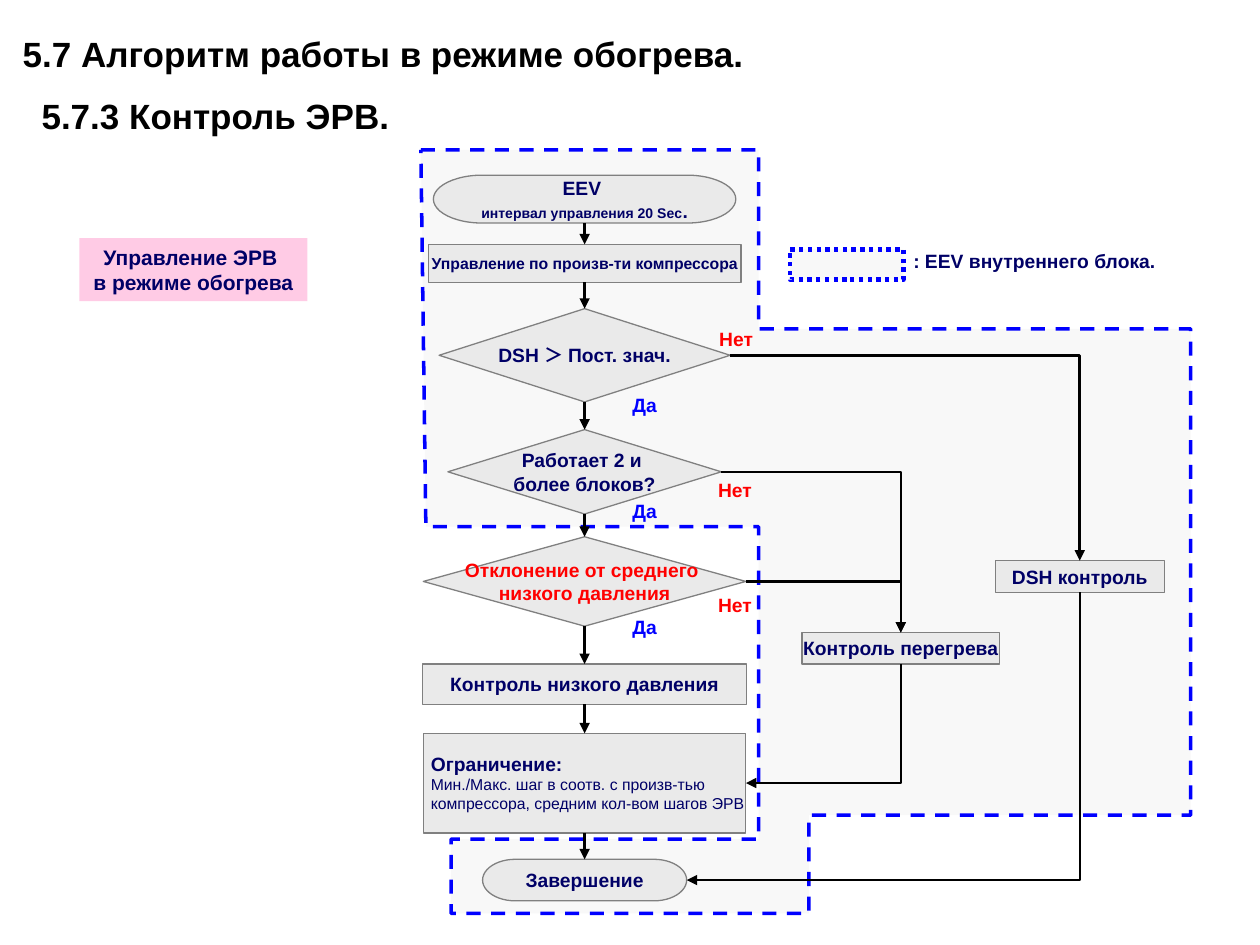
"""Build the heating-mode EEV control flowchart slide."""
from dataclasses import dataclass
from itertools import pairwise
from typing import NamedTuple

from lxml.etree import SubElement
from pptx import Presentation
from pptx.dml.color import RGBColor
from pptx.enum.dml import MSO_LINE
from pptx.enum.shapes import MSO_CONNECTOR as Link, MSO_SHAPE as Kind
from pptx.enum.text import MSO_ANCHOR as Anchor, MSO_AUTO_SIZE as AutoSize, PP_ALIGN as Align
from pptx.oxml.ns import qn
from pptx.util import Inches, Pt

COLORS = {
    "zone": "F8F8F8", "node": "EAEAEA", "edge": "808080", "navy": "000066",
    "red": "FF0000", "blue": "0000FF", "black": "000000", "pink": "FF99CC",
}
TOP, BOTTOM, RIGHT = 0, 2, 3
MAIN_X, OVERHEAT_X, DSH_X = 4.64, 7.15, 8.57
FRAME_FORMAT = {"word_wrap": False, "vertical_anchor": Anchor.MIDDLE}
LABEL_FORMAT = {"word_wrap": False, "auto_size": AutoSize.SHAPE_TO_FIT_TEXT}
LIMIT_FORMAT = {"margin_left": Inches(0.06), "margin_right": Inches(0.06),
                "margin_top": 0, "margin_bottom": Inches(0.01)}
TITLE_FORMAT = {"word_wrap": True, "vertical_anchor": Anchor.TOP, "auto_size": AutoSize.NONE}


class Words(NamedTuple):
    text: str
    size: float = 11
    color: str = "navy"
    bold: bool = True


@dataclass
class Node:
    kind: Kind
    center: float
    top: float
    width: float
    height: float
    lines: list[list[Words]]
    align: Align = Align.CENTER


@dataclass
class Label:
    left: float
    top: float
    width: float
    words: Words


NODES = {
    "start": Node(Kind.FLOWCHART_TERMINATOR, MAIN_X, 1.39, 2.4, 0.38, [
        [Words("EEV ")], [Words("интервал управления 20 Sec", 8), Words(".")]]),
    "capacity": Node(Kind.FLOWCHART_PROCESS, MAIN_X, 1.94, 2.48, 0.3, [
        [Words("Управление по произв-ти компрессора", 9)]]),
    "dsh_check": Node(Kind.FLOWCHART_DECISION, MAIN_X, 2.45, 2.31, 0.74, [
        [Words("DSH ＞ Пост. знач.")]]),
    "units_check": Node(Kind.FLOWCHART_DECISION, MAIN_X, 3.41, 2.17, 0.67, [
        [Words("Работает 2 и ")], [Words("более блоков?")]]),
    "deviation": Node(Kind.FLOWCHART_DECISION, MAIN_X, 4.26, 2.56, 0.71, [
        [Words("Отклонение от среднего ", color="red")],
        [Words("низкого давления", color="red")]]),
    "low_pressure": Node(Kind.FLOWCHART_PROCESS, MAIN_X, 5.27, 2.57, 0.32, [
        [Words("Контроль низкого давления")]]),
    "limit": Node(Kind.FLOWCHART_PROCESS, MAIN_X, 5.82, 2.56, 0.79, [
        [Words("Ограничение:")],
        [Words("Мин./Макс. шаг в соотв. с произв-тью", 9, bold=False)],
        [Words("компрессора, средним кол-вом шагов ЭРВ", 9, bold=False)]], Align.LEFT),
    "finish": Node(Kind.FLOWCHART_TERMINATOR, MAIN_X, 6.82, 1.62, 0.33, [
        [Words("Завершение")]]),
    "overheat": Node(Kind.FLOWCHART_PROCESS, OVERHEAT_X, 5.02, 1.57, 0.25, [
        [Words("Контроль перегрева")]]),
    "dsh": Node(Kind.FLOWCHART_PROCESS, DSH_X, 4.45, 1.34, 0.25, [
        [Words("DSH контроль")]]),
}
MAIN_FLOW = ["start", "capacity", "dsh_check", "units_check", "deviation",
             "low_pressure", "limit", "finish"]
BRANCHES = [("dsh_check", "dsh"), ("units_check", "overheat"), ("deviation", "overheat")]
RETURNS = [("dsh", "finish"), ("overheat", "limit")]
YES, NO = Words("Да", color="blue"), Words("Нет", color="red")
LABELS = [
    *(Label(4.92, top, 0.4, YES) for top in (3.07, 3.91, 4.83)),
    *(Label(left, top, 0.48, NO) for left, top in ((5.61, 2.55), (5.6, 3.75), (5.6, 4.66))),
    Label(7.15, 1.93, 2.14, Words(": EEV внутреннего блока.")),
]
ZONE = [(3.34, 1.19), (6.02, 1.19), (6.02, 2.61), (9.45, 2.61), (9.45, 6.47), (6.42, 6.47),
        (6.42, 7.25), (3.58, 7.25), (3.58, 6.66), (6.02, 6.66), (6.02, 4.18), (3.38, 4.18)]


def rgb(name: str) -> RGBColor:
    return RGBColor.from_string(COLORS[name])


def apply(target, values: dict) -> None:
    for name, value in values.items():
        setattr(target, name, value)


def write(frame, lines: list[list[Words]], align: Align) -> None:
    for index, line in enumerate(lines):
        paragraph = frame.paragraphs[0] if index == 0 else frame.add_paragraph()
        paragraph.alignment = align
        for words in line:
            run = paragraph.add_run()
            run.text = words.text
            apply(run.font, {"name": "Arial", "size": Pt(words.size), "bold": words.bold})
            run.font.color.rgb = rgb(words.color)


def paint(shape, fill: str, line: str, width: float, dash=None) -> None:
    shape.shadow.inherit = False
    shape.fill.solid()
    shape.fill.fore_color.rgb = rgb(fill)
    shape.line.color.rgb = rgb(line)
    apply(shape.line, {"width": Pt(width), "dash_style": dash})


def draw_node(shapes, node: Node):
    box = shapes.add_shape(node.kind, Inches(node.center - node.width / 2), Inches(node.top),
                           Inches(node.width), Inches(node.height))
    paint(box, "node", "edge", 0.75)
    apply(box.text_frame, FRAME_FORMAT)
    write(box.text_frame, node.lines, node.align)
    return box


def draw_arrow(shapes, source, source_side: int, target, target_side: int, kind=Link.STRAIGHT):
    arrow = shapes.add_connector(kind, 0, 0, 0, 0)
    arrow.begin_connect(source, source_side)
    arrow.end_connect(target, target_side)
    arrow.line.color.rgb = rgb("black")
    arrow.line.width = Pt(1.5)
    SubElement(arrow.line._get_or_add_ln(), qn("a:tailEnd"), type="triangle")
    properties = arrow._element.spPr
    SubElement(properties, qn("a:effectLst"))
    if kind == Link.ELBOW:
        properties.find(qn("a:prstGeom")).set("prst", "bentConnector2")
    return arrow


def draw_return(shapes, source, target) -> None:
    arrow = draw_arrow(shapes, source, BOTTOM, target, RIGHT, Link.ELBOW)
    across, down = arrow.width, arrow.height
    shift = (across - down) // 2
    apply(arrow, {"left": arrow.left + shift, "top": arrow.top - shift,
                  "width": down, "height": across})
    frame = arrow._element.spPr.find(qn("a:xfrm"))
    frame.attrib.pop("flipH", None)
    frame.set("rot", str(90 * 60000))


def draw_label(shapes, label: Label) -> None:
    caption = shapes.add_textbox(Inches(label.left), Inches(label.top),
                                 Inches(label.width), Inches(0.29))
    apply(caption.text_frame, LABEL_FORMAT)
    write(caption.text_frame, [[label.words]], Align.LEFT)


def draw_zone(shapes) -> None:
    corners = [(Inches(x), Inches(y)) for x, y in ZONE]
    builder = shapes.build_freeform(*corners[0])
    builder.add_line_segments(corners[1:], close=True)
    paint(builder.convert_to_shape(), "zone", "blue", 2, MSO_LINE.DASH)


def draw_topic(shapes) -> None:
    topic = shapes.add_shape(Kind.RECTANGLE, Inches(0.63), Inches(1.89), Inches(1.81), Inches(0.5))
    paint(topic, "pink", "pink", 0.75)
    topic.line.fill.background()
    tint = topic._element.spPr.find(qn("a:solidFill"))[0]
    SubElement(tint, qn("a:alpha"), val="50000")
    apply(topic.text_frame, LABEL_FORMAT | {"vertical_anchor": Anchor.TOP})
    write(topic.text_frame, [[Words("Управление ЭРВ ", 12)], [Words("в режиме обогрева", 12)]],
          Align.CENTER)


def draw_title(title) -> None:
    apply(title, {"left": Inches(0.08), "top": Inches(0.21),
                  "width": Inches(8.84), "height": Inches(0.94)})
    apply(title.text_frame, TITLE_FORMAT)
    write(title.text_frame, [[Words("5.7 Алгоритм работы в режиме обогрева.", 20, "black")],
                             [Words("5.7.3 Контроль ЭРВ.", 20, "black")]], Align.LEFT)
    heading, section = title.text_frame.paragraphs
    heading.space_after = Pt(11)
    section._p.get_or_add_pPr().set("marL", str(Inches(0.15)))


def main() -> None:
    deck = Presentation()
    apply(deck, {"slide_width": Inches(10), "slide_height": Inches(7.5)})
    shapes = deck.slides.add_slide(deck.slide_layouts[5]).shapes
    draw_title(shapes.title)
    draw_zone(shapes)
    boxes = {name: draw_node(shapes, node) for name, node in NODES.items()}
    apply(boxes["limit"].text_frame, LIMIT_FORMAT)
    for source, target in pairwise(MAIN_FLOW):
        draw_arrow(shapes, boxes[source], BOTTOM, boxes[target], TOP)
    for source, target in BRANCHES:
        draw_arrow(shapes, boxes[source], RIGHT, boxes[target], TOP, Link.ELBOW)
    for source, target in RETURNS:
        draw_return(shapes, boxes[source], boxes[target])
    for label in LABELS:
        draw_label(shapes, label)
    draw_topic(shapes)
    legend = shapes.add_shape(Kind.RECTANGLE, Inches(6.27), Inches(1.98), Inches(0.9), Inches(0.24))
    paint(legend, "zone", "blue", 2.5, MSO_LINE.ROUND_DOT)
    deck.save("out.pptx")


if __name__ == "__main__":
    main()
